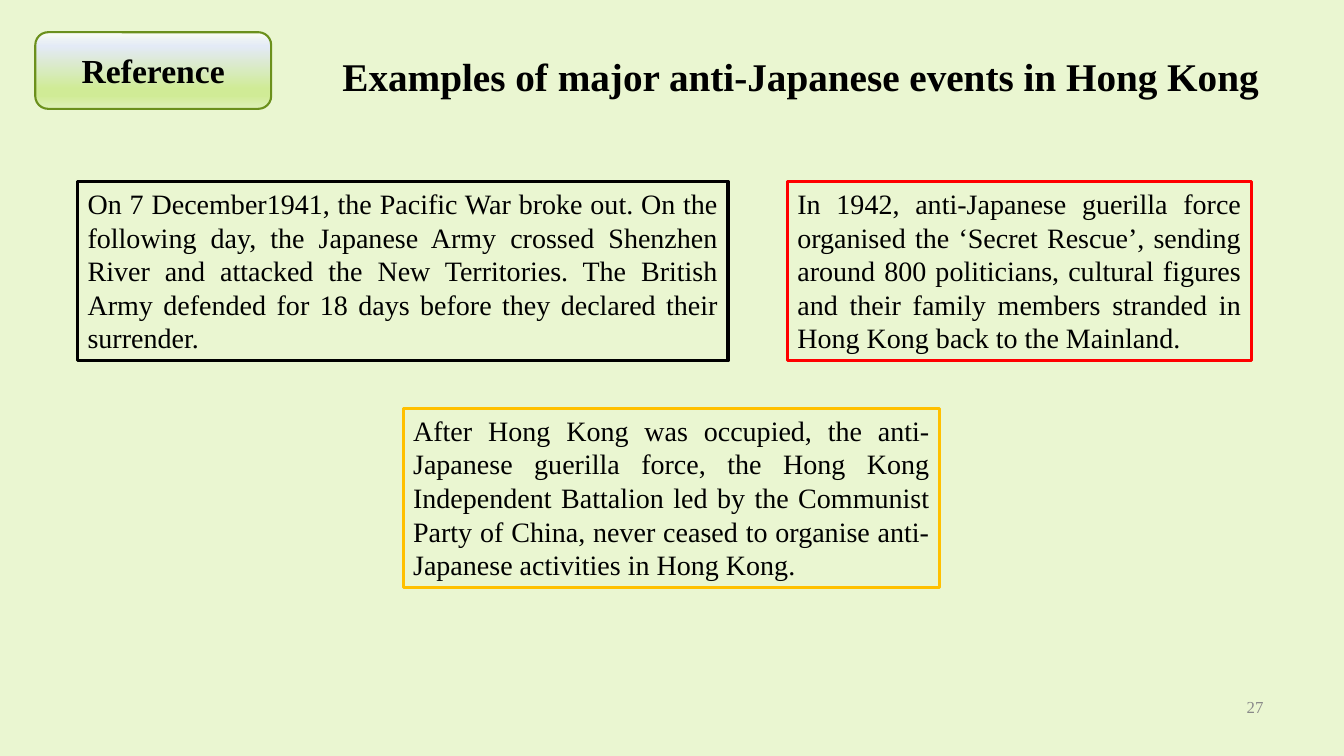
from pptx import Presentation
from pptx.dml.color import RGBColor
from pptx.enum.shapes import MSO_SHAPE as Shape
from pptx.enum.text import MSO_ANCHOR as Anchor, PP_ALIGN as Align
from pptx.oxml import parse_xml
from pptx.oxml.ns import nsdecls
from pptx.util import Inches, Pt

THEME = {
    "font": "Times New Roman",
    "background": "EAF6D1",
    "text": "000000",
    "muted": "898989",
    "war": "000000",
    "rescue": "FF0000",
    "battalion": "FFC000",
    "badge_line": "6B901C",
    "badge_stops": [(0, "FAFDF3"), (18, "E3EAF6"), (74, "D0EB96"), (83, "D0EB96"), (100, "DFF1B9")],
    "title_size": 28,
    "badge_size": 24,
    "body_size": 20,
    "number_size": 12,
}

presentation = Presentation()
presentation.slide_width = Inches(13.33)
presentation.slide_height = Inches(7.5)
column = presentation.slide_width / 100
row = presentation.slide_height / 100

slide = presentation.slides.add_slide(presentation.slide_layouts[6])
slide.background.fill.solid()
slide.background.fill.fore_color.rgb = RGBColor.from_string(THEME["background"])


def add_text_shape(text, left, top, width, height, size, kind=Shape.RECTANGLE, line=None,
                   line_width=2.25, color="text", bold=False, align=Align.JUSTIFY,
                   anchor=Anchor.TOP, spacing=1.0):
    place = [int(left * column), int(top * row), int(width * column), int(height * row)]
    if line:
        shape = slide.shapes.add_shape(kind, *place)
        shape.shadow.inherit = False
        shape.fill.background()
        shape.line.color.rgb = RGBColor.from_string(THEME[line])
        shape.line.width = Pt(line_width)
    else:
        shape = slide.shapes.add_textbox(*place)
    frame = shape.text_frame
    frame.word_wrap = True
    frame.vertical_anchor = anchor
    paragraph = frame.paragraphs[0]
    paragraph.alignment = align
    paragraph.line_spacing = spacing
    run = paragraph.add_run()
    run.text = text
    run.font.name = THEME["font"]
    run.font.size = Pt(THEME[size])
    run.font.bold = bold
    run.font.color.rgb = RGBColor.from_string(THEME[color])
    return shape


events = [
    ("war", 5.78, 24, 48.39,
     "On 7 December1941, the Pacific War broke out. On the following day, the Japanese Army "
     "crossed Shenzhen River and attacked the New Territories. The British Army defended for "
     "18 days before they declared their surrender."),
    ("battalion", 30, 54, 39.91,
     "After Hong Kong was occupied, the anti-Japanese guerilla force, the Hong Kong Independent "
     "Battalion led by the Communist Party of China, never ceased to organise anti-Japanese "
     "activities in Hong Kong."),
    ("rescue", 58.59, 24, 34.51,
     "In 1942, anti-Japanese guerilla force organised the ‘Secret Rescue’, sending around 800 "
     "politicians, cultural figures and their family members stranded in Hong Kong back to the "
     "Mainland."),
]
for line, left, top, width, text in events:
    add_text_shape(text, left, top, width, 23.73, "body_size", line=line)

add_text_shape("27", 89.12, 90.8, 5.63, 5.33, "number_size", color="muted",
               align=Align.RIGHT, anchor=Anchor.MIDDLE)

badge = add_text_shape("Reference", 2.63, 4.27, 17.55, 10.13, "badge_size",
                       kind=Shape.ROUNDED_RECTANGLE, line="badge_line", line_width=1.5,
                       bold=True, align=Align.CENTER, anchor=Anchor.MIDDLE)
badge.fill.gradient()
badge.fill.gradient_angle = 270
stops = "".join(
    f'<a:gs pos="{position * 1000}"><a:srgbClr val="{color}"/></a:gs>'
    for position, color in THEME["badge_stops"])
stop_list = badge.element.spPr.find(".//{*}gsLst")
stop_list.getparent().replace(
    stop_list, parse_xml(f'<a:gsLst {nsdecls("a")}>{stops}</a:gsLst>'))

add_text_shape("Examples of major anti-Japanese events in Hong Kong", 20.78, 3.2, 77.57, 9.6,
               "title_size", bold=True, align=Align.CENTER, spacing=1.5)

presentation.save("out.pptx")
